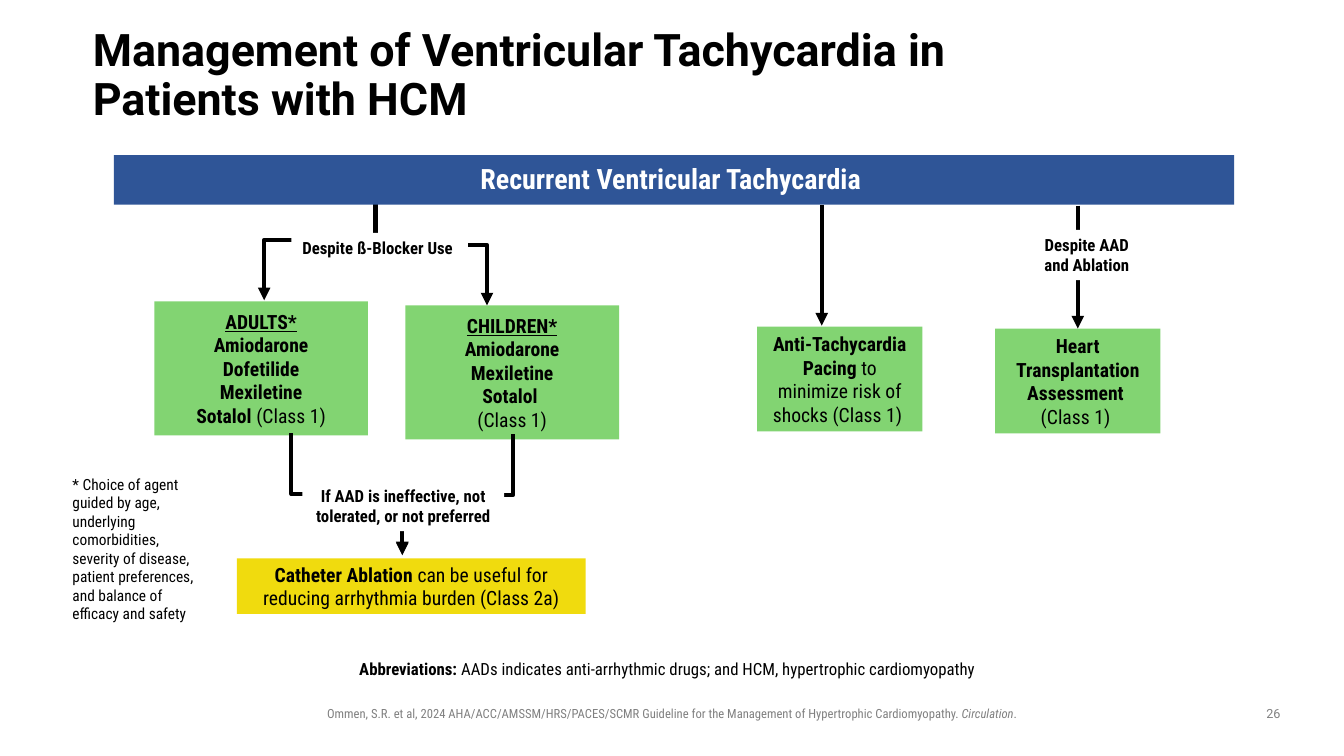
from dataclasses import dataclass

from lxml import etree
from pptx import Presentation, util as u
from pptx.dml.color import RGBColor
from pptx.enum import shapes, text
from pptx.oxml import ns

# Content: each paragraph is a list of (text, style); b bold, u underlined, i italic
TITLE = [[("Management of Ventricular Tachycardia in Patients with HCM", "b")]]
ABBREVIATIONS = [[
    ("Abbreviations: ", "b"),
    ("AADs indicates anti-arrhythmic drugs; and HCM, hypertrophic cardiomyopathy", ""),
]]
CITATION = [[
    ("Ommen, S.R. et al, 2024 AHA/ACC/AMSSM/HRS/PACES/SCMR Guideline for the "
     "Management of Hypertrophic Cardiomyopathy. ", ""),
    ("Circulation", "i"),
    (".", ""),
]]
FOOTNOTE = [[(
    "* Choice of agent guided by age, underlying comorbidities, severity of disease, "
    "patient preferences, and balance of efficacy and safety", "")]]
PAGE_NUMBER = [[("26", "")]]
BANNER = [[("Recurrent Ventricular Tachycardia ", "b")]]

# Boxes are (left, top, width, height) in px, 100 px to the inch
TREATMENTS = {
    "pacing": ((751, 324, 164, 104), "green", [[
        ("Anti-Tachycardia Pacing ", "b"),
        ("to minimize risk of shocks (Class 1) ", "")]]),
    "transplant": ((987, 326, 164, 104), "green", [[
        ("Heart Transplantation Assessment ", "b"), ("\n", ""), ("(Class 1) ", "")]]),
    "adults": ((153, 299, 212, 133), "green", [
        [("ADULTS*", "bu")], [("Amiodarone", "b")], [("Dofetilide", "b")],
        [("Mexiletine", "b")], [("Sotalol ", "b"), ("(Class 1)", "")]]),
    "children": ((402, 303, 212, 133), "green", [
        [("CHILDREN*", "bu")], [("Amiodarone", "b")], [("Mexiletine", "b")],
        [("Sotalol ", "b")], [("(Class 1)", "")]]),
    "ablation": ((235, 554, 346, 55), "yellow", [[
        ("Catheter Ablation ", "b"),
        ("can be useful for reducing arrhythmia burden (Class 2a)", "")]]),
}
CONDITIONS = [
    ((300, 477, 200, 50), "If AAD is ineffective, not tolerated, or not preferred"),
    ((1023, 228, 110, 50), "Despite AAD and Ablation"),
    ((289, 231, 175, 30), "Despite ß-Blocker Use "),
]
# Arrows are (from x, from y, to x, to y) in px
PACING_ARROW = (815, 203, 815, 323)
TRANSPLANT_ARROW = (1069, 204, 1069, 326)
BENT_ARROWS = [
    (373, 183, 483, 303),
    (372, 178, 262, 298),
    (289, 430, 399, 550),
    (509, 431, 399, 551),
]


@dataclass(frozen=True)
class Theme:
    heading: str = "Roboto"
    condensed: str = "Roboto Condensed"
    black: str = "000000"
    white: str = "FFFFFF"
    gray: str = "808080"
    blue: str = "2F5597"
    green: str = "82D472"
    yellow: str = "F0DB0E"
    title_size: int = 32
    banner_size: int = 20
    box_size: int = 14
    label_size: int = 12
    note_size: int = 11
    footer_size: int = 9
    line_width: int = 3


THEME = Theme()
CENTER = text.PP_ALIGN.CENTER
MIDDLE = text.MSO_ANCHOR.MIDDLE
DEFAULT_INSETS = (10, 5, 10, 5)
QUARTER_TURN = 5400000  # 90 degrees in 60000ths


def px(value):
    return u.Emu(round(value * 9144))


def place(shape, box):
    shape.left, shape.top, shape.width, shape.height = map(px, box)


def write(shape, paragraphs, size, color=THEME.black, font=THEME.condensed,
          align=CENTER, anchor=text.MSO_ANCHOR.TOP, insets=DEFAULT_INSETS, spacing=1.0):
    frame = shape.text_frame
    frame.word_wrap = True
    frame.auto_size = text.MSO_AUTO_SIZE.NONE
    frame.vertical_anchor = anchor
    (frame.margin_left, frame.margin_top,
     frame.margin_right, frame.margin_bottom) = map(px, insets)
    for index, runs in enumerate(paragraphs):
        paragraph = frame.add_paragraph() if index else frame.paragraphs[0]
        paragraph.alignment = align
        paragraph.line_spacing = spacing
        paragraph.space_before = u.Pt(0)
        if shape.is_placeholder:
            properties = paragraph._p.get_or_add_pPr()
            properties.set("marL", "0")
            properties.set("indent", "0")
            etree.SubElement(properties, ns.qn("a:buNone"))
        paragraph.font.name = font
        paragraph.font.size = u.Pt(size)
        paragraph.font.color.rgb = RGBColor.from_string(color)
        for words, style in runs:
            if words == "\n":
                paragraph.add_line_break()
                continue
            run = paragraph.add_run()
            run.text = words
            run.font.bold = "b" in style
            if "u" in style:
                run.font.underline = True
            if "i" in style:
                run.font.italic = True


def add_box(slide, box, fill):
    shape = slide.shapes.add_shape(shapes.MSO_SHAPE.RECTANGLE, *map(px, box))
    shape.shadow.inherit = False
    shape.fill.solid()
    shape.fill.fore_color.rgb = RGBColor.from_string(fill)
    shape.line.fill.background()
    return shape


def add_arrow(slide, kind, points):
    arrow = slide.shapes.add_connector(kind, *map(px, points))
    arrow.line.color.rgb = RGBColor.from_string(THEME.black)
    arrow.line.width = u.Pt(THEME.line_width)
    etree.SubElement(arrow.line._get_or_add_ln(), ns.qn("a:tailEnd"), type="triangle")
    etree.SubElement(arrow._element.spPr, ns.qn("a:effectLst"))
    return arrow


def add_bent_arrow(slide, points):
    """Elbow that leaves and arrives vertically: a horizontal elbow, turned."""
    x1, y1, x2, y2 = points
    center_x, center_y = (x1 + x2) / 2, (y1 + y2) / 2
    rightward = x2 > x1
    half_width = (y2 - y1) / 2 * (-1 if rightward else 1)
    half_height = abs(x2 - x1) / 2
    arrow = add_arrow(slide, shapes.MSO_CONNECTOR.ELBOW, (
        center_x - half_width, center_y - half_height,
        center_x + half_width, center_y + half_height))
    turns = 3 if rightward else 1
    arrow._element.spPr.find(ns.qn("a:xfrm")).set("rot", str(turns * QUARTER_TURN))


def main():
    presentation = Presentation()
    presentation.slide_width, presentation.slide_height = px(1333), px(750)
    slide = presentation.slides.add_slide(presentation.slide_layouts[1])

    # Title and abbreviations
    title, body = slide.placeholders
    place(title, (92, 40, 969, 72))
    write(title, TITLE, THEME.title_size, font=THEME.heading, align=text.PP_ALIGN.LEFT,
          anchor=MIDDLE, insets=(0, 0, 0, 0), spacing=0.9)
    place(body, (173, 651, 988, 24))
    write(body, ABBREVIATIONS, THEME.label_size, insets=(0, 5, 10, 5), spacing=0.9)

    # Treatment boxes
    boxes = {}
    for name, (box, fill, paragraphs) in TREATMENTS.items():
        boxes[name] = add_box(slide, box, getattr(THEME, fill))
        write(boxes[name], paragraphs, THEME.box_size, anchor=MIDDLE)

    # Arrows
    straight = shapes.MSO_CONNECTOR.STRAIGHT
    add_arrow(slide, straight, PACING_ARROW)
    add_arrow(slide, straight, TRANSPLANT_ARROW).end_connect(boxes["transplant"], 0)
    for points in BENT_ARROWS:
        add_bent_arrow(slide, points)

    # Conditions interrupt the arrows
    for box, words in CONDITIONS:
        write(add_box(slide, box, THEME.white), [[(words, "b")]], THEME.label_size)

    # Banner covers the arrow starts
    banner = add_box(slide, (113, 154, 1111, 49), THEME.blue)
    write(banner, BANNER, THEME.banner_size, color=THEME.white, anchor=MIDDLE,
          insets=(0, 0, 0, 0), spacing=0.9)

    # Footnote, citation and page number
    for box, paragraphs, size, color, font, align in [
        ((62, 466, 143, 158), FOOTNOTE, THEME.note_size, THEME.black,
         THEME.condensed, text.PP_ALIGN.LEFT),
        ((294, 695, 745, 25), CITATION, THEME.footer_size, THEME.gray,
         THEME.condensed, CENTER),
        ((1242, 695, 42, 26), PAGE_NUMBER, THEME.footer_size, THEME.gray,
         THEME.heading, CENTER),
    ]:
        write(slide.shapes.add_textbox(*map(px, box)), paragraphs, size, color, font, align)

    presentation.save("out.pptx")


if __name__ == "__main__":
    main()
